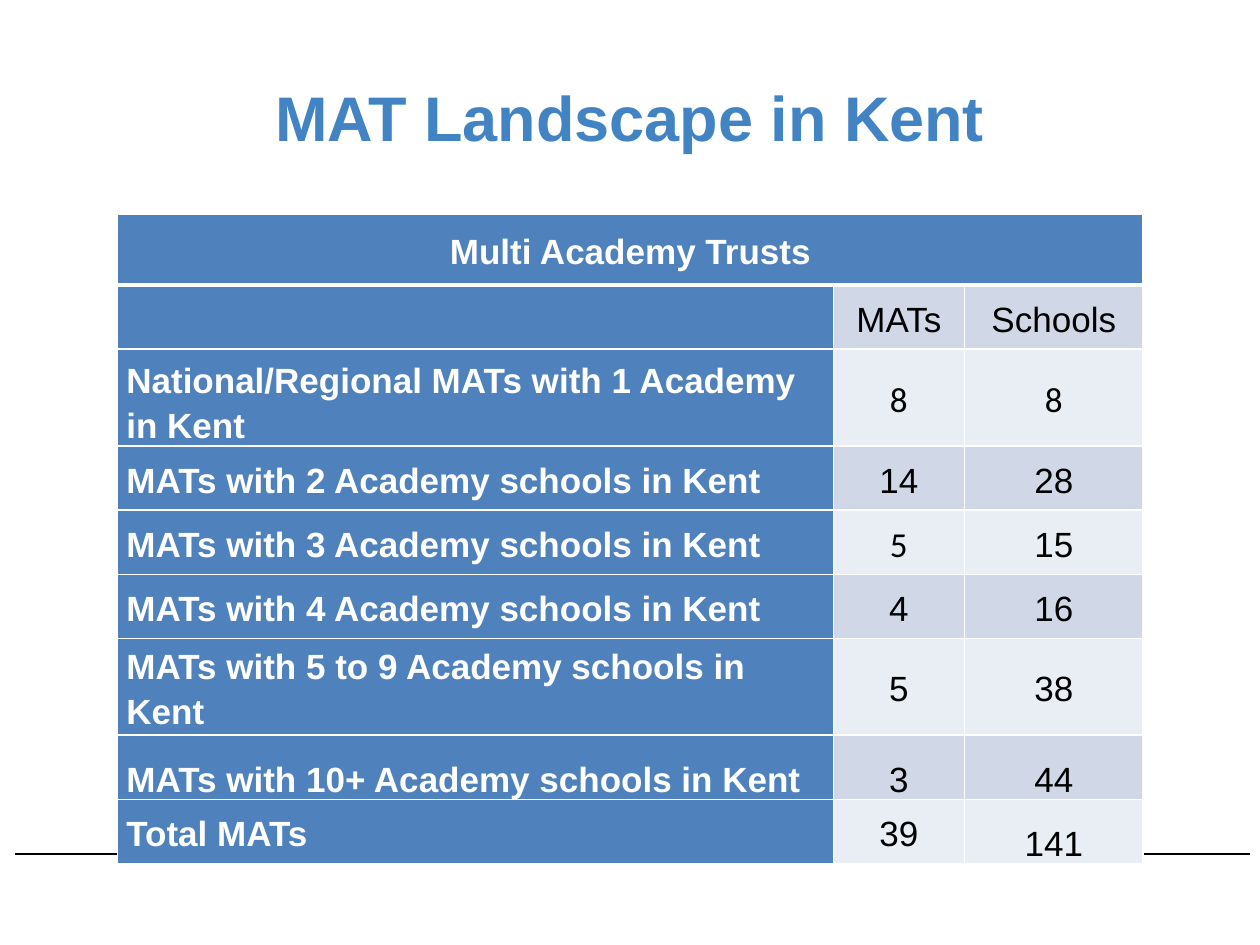
"""Build the slide on multi academy trusts in Kent."""
from dataclasses import dataclass

from lxml.etree import SubElement
from pptx import Presentation
from pptx.dml.color import RGBColor
from pptx.enum.shapes import MSO_CONNECTOR
from pptx.enum.text import MSO_ANCHOR, PP_ALIGN
from pptx.oxml import parse_xml
from pptx.oxml.ns import nsdecls, qn
from pptx.slide import Slide
from pptx.table import _Cell
from pptx.text.text import _Paragraph
from pptx.util import Pt

BLACK = RGBColor(0x00, 0x00, 0x00)
WHITE = RGBColor(0xFF, 0xFF, 0xFF)
TITLE_BLUE = RGBColor(0x42, 0x83, 0xC4)
HEADER_BLUE = RGBColor(0x4F, 0x81, 0xBD)
BANDS = (RGBColor(0xD0, 0xD8, 0xE8), RGBColor(0xE9, 0xED, 0xF4))

COLUMN_WIDTHS = (409, 74.9, 102.2)
HEADING_HEIGHT = 40.3
ROW_HEIGHT = 36.7
MIDDLE = MSO_ANCHOR.MIDDLE
BOTTOM = MSO_ANCHOR.BOTTOM


@dataclass(frozen=True)
class TrustRow:
    """One body row: its texts, vertical anchors and number fonts."""

    texts: tuple[str, str, str]
    anchors: tuple[MSO_ANCHOR, MSO_ANCHOR, MSO_ANCHOR] = (MIDDLE,) * 3
    number_fonts: tuple[str, str] = ("Arial", "Arial")


TRUST_ROWS = (
    TrustRow(("", "MATs", "Schools")),
    TrustRow(
        ("National/Regional MATs with 1 Academy in Kent", "8", "8"),
        (BOTTOM, MIDDLE, MIDDLE),
        ("Calibri", "Calibri"),
    ),
    TrustRow(("MATs with 2 Academy schools in Kent", "14", "28")),
    TrustRow(
        ("MATs with 3 Academy schools in Kent", "5", "15"),
        number_fonts=("Calibri", "Arial"),
    ),
    TrustRow(("MATs with 4 Academy schools in Kent", "4", "16")),
    TrustRow(("MATs with 5 to 9 Academy schools in Kent", "5", "38")),
    TrustRow(("MATs with 10+ Academy schools in Kent", "3", "44"), (BOTTOM,) * 3),
    TrustRow(("Total MATs", "39", "141"), (MIDDLE, MIDDLE, BOTTOM)),
)


def style_paragraph(
    paragraph: _Paragraph, size: float, color: RGBColor, bold: bool,
    alignment: PP_ALIGN, font_name: str = "Arial",
) -> None:
    """Set the font and alignment of a paragraph."""
    paragraph.alignment = alignment
    paragraph.font.name = font_name
    paragraph.font.size = Pt(size)
    paragraph.font.bold = bold
    paragraph.font.color.rgb = color


def set_borders(cell: _Cell, top: float = 1, bottom: float = 1) -> None:
    """Draw white borders of the given widths around a cell."""
    properties = cell._tc.get_or_add_tcPr()
    widths = {"lnL": 1, "lnR": 1, "lnT": top, "lnB": bottom}
    for position, (side, width) in enumerate(widths.items()):
        border = parse_xml(
            f'<a:{side} {nsdecls("a")} w="{Pt(width)}"><a:solidFill>'
            f'<a:srgbClr val="{WHITE}"/></a:solidFill></a:{side}>'
        )
        properties.insert(position, border)


def fill_cell(
    cell: _Cell, text: str, fill: RGBColor, color: RGBColor, bold: bool,
    alignment: PP_ALIGN, anchor: MSO_ANCHOR = MIDDLE, font_name: str = "Arial",
) -> None:
    """Write the text of a cell and set its look."""
    cell.fill.solid()
    cell.fill.fore_color.rgb = fill
    cell.vertical_anchor = anchor
    cell.margin_left = cell.margin_right = Pt(5)
    cell.margin_top = cell.margin_bottom = Pt(0)
    cell.text = text
    paragraph = cell.text_frame.paragraphs[0]
    paragraph.line_spacing = 1.15
    style_paragraph(paragraph, 20, color, bold, alignment, font_name)


def add_title(slide: Slide) -> None:
    """Add the slide title."""
    shape = slide.shapes.add_textbox(Pt(36), Pt(21.6), Pt(648), Pt(90))
    shape.text_frame.word_wrap = True
    shape.text_frame.vertical_anchor = MIDDLE
    paragraph = shape.text_frame.paragraphs[0]
    paragraph.text = "MAT Landscape in Kent"
    style_paragraph(paragraph, 36, TITLE_BLUE, True, PP_ALIGN.CENTER)


def add_footer_line(slide: Slide) -> None:
    """Add the thin rule at the foot of the slide."""
    line = slide.shapes.add_connector(
        MSO_CONNECTOR.STRAIGHT, Pt(8.6), Pt(488), Pt(714.3), Pt(488)
    )
    line.line.color.rgb = BLACK
    line.line.width = Pt(1)
    SubElement(line._element.spPr, qn("a:effectLst"))


def add_trust_table(slide: Slide) -> None:
    """Add the table of trusts and schools."""
    height = HEADING_HEIGHT + ROW_HEIGHT * len(TRUST_ROWS)
    table = slide.shapes.add_table(
        len(TRUST_ROWS) + 1, len(COLUMN_WIDTHS),
        Pt(67.2), Pt(122.6), Pt(sum(COLUMN_WIDTHS)), Pt(height),
    ).table
    for column, width in zip(table.columns, COLUMN_WIDTHS):
        column.width = Pt(width)
    for row in table.rows:
        row.height = Pt(ROW_HEIGHT)
    table.rows[0].height = Pt(HEADING_HEIGHT)

    table.cell(0, 0).merge(table.cell(0, 2))
    fill_cell(
        table.cell(0, 0), "Multi Academy Trusts", HEADER_BLUE, WHITE, True,
        PP_ALIGN.CENTER,
    )
    for cell in table.rows[0].cells:
        set_borders(cell, bottom=3)

    for index, trust_row in enumerate(TRUST_ROWS):
        label, *numbers = table.rows[index + 1].cells
        fill_cell(
            label, trust_row.texts[0], HEADER_BLUE, WHITE, True,
            PP_ALIGN.LEFT, trust_row.anchors[0],
        )
        for cell, text, anchor, font_name in zip(
            numbers, trust_row.texts[1:], trust_row.anchors[1:],
            trust_row.number_fonts,
        ):
            fill_cell(
                cell, text, BANDS[index % 2], BLACK, False,
                PP_ALIGN.CENTER, anchor, font_name,
            )
        for cell in (label, *numbers):
            set_borders(cell, top=3 if index == 0 else 1)


def main() -> None:
    """Create and save the presentation."""
    presentation = Presentation()
    presentation.slide_width = Pt(720)
    presentation.slide_height = Pt(540)
    slide = presentation.slides.add_slide(presentation.slide_layouts[6])
    add_footer_line(slide)
    add_title(slide)
    add_trust_table(slide)
    presentation.save("out.pptx")


if __name__ == "__main__":
    main()
